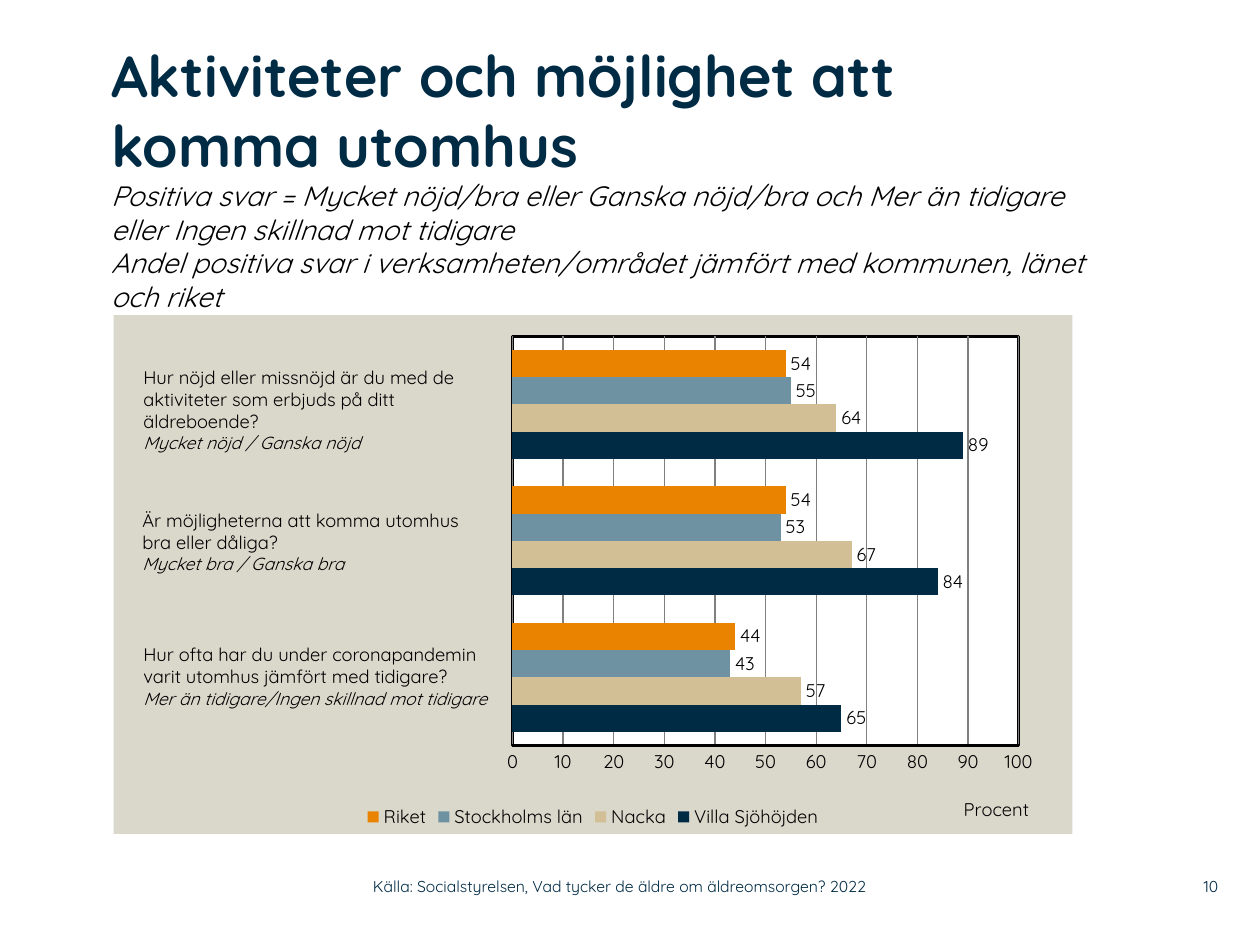
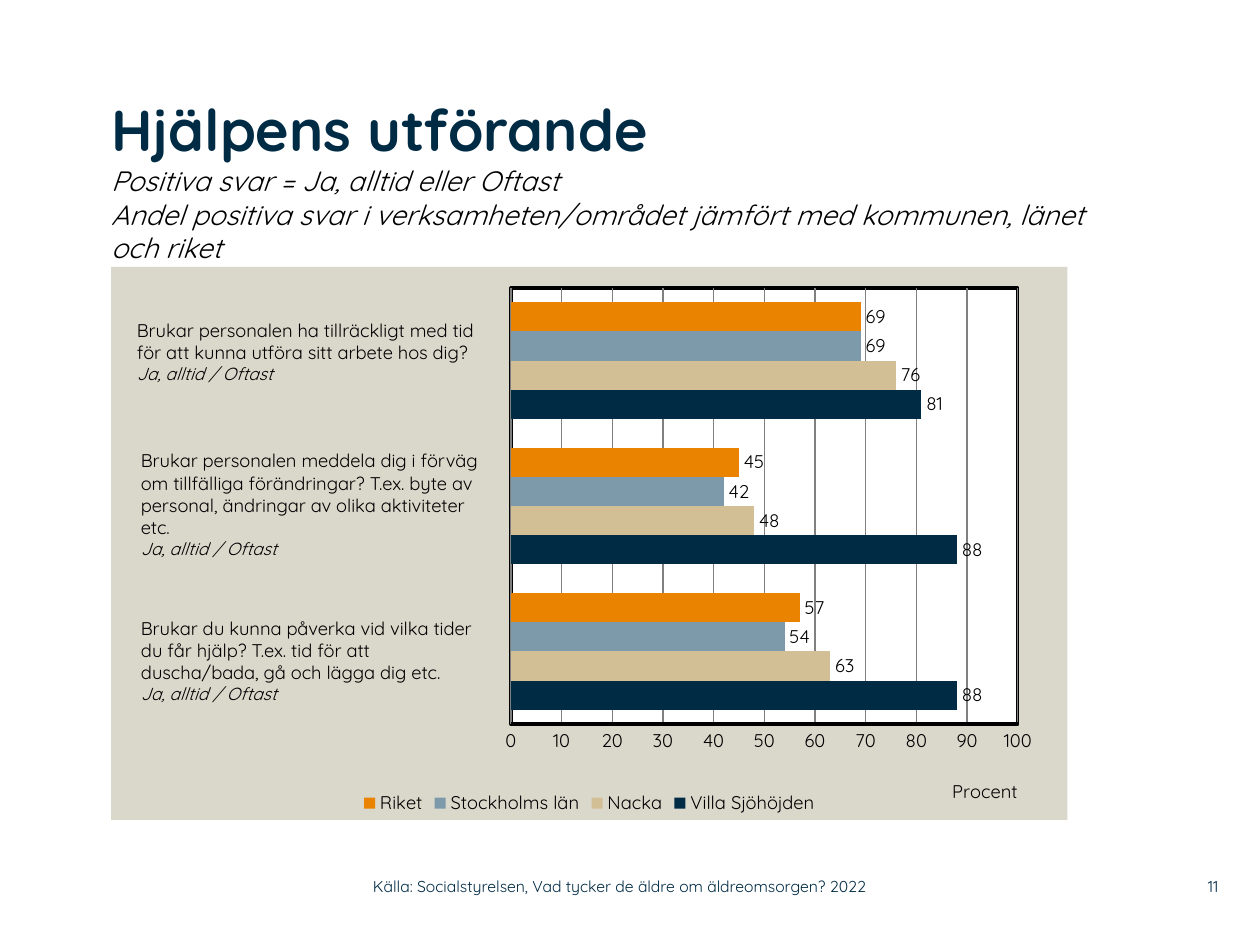
from lxml.etree import SubElement
from pptx import Presentation
from pptx.chart.data import CategoryChartData
from pptx.dml.color import RGBColor
from pptx.enum.chart import XL_CHART_TYPE, XL_LABEL_POSITION, XL_LEGEND_POSITION, XL_TICK_MARK
from pptx.enum.text import MSO_ANCHOR, PP_ALIGN
from pptx.oxml import parse_xml
from pptx.oxml.ns import nsdecls, qn
from pptx.util import Cm, Pt

FONT = "Quicksand"
NAVY, BLACK, WHITE, SAND, GRID = "002B45", "000000", "FFFFFF", "DAD7CB", "808080"
TITLE = {"size": Pt(33), "bold": True, "color": NAVY}
SUBTITLE = {"size": Pt(16), "italic": True, "color": BLACK}
QUESTION = {"size": Pt(10.5), "color": BLACK}
ANSWER = {"size": Pt(10), "italic": True, "color": BLACK}
FOOTER = {"size": Pt(9), "color": NAVY}
CHART_TEXT = {"size": Pt(10.5), "bold": False, "color": BLACK}

COMPARISON = "Andel positiva svar i verksamheten/området jämfört med kommunen, länet och riket"
SOURCE = "Källa: Socialstyrelsen, Vad tycker de äldre om äldreomsorgen? 2022"
SERIES = ["Villa Sjöhöjden", "Nacka", "Stockholms län", "Riket"]

SLIDES = [
    {
        "number": "10",
        "title": "Aktiviteter och möjlighet att komma utomhus",
        "title_box": (2.24, 0.81, 19.81, 4.8),
        "positive": "Positiva svar = Mycket nöjd/bra eller Ganska nöjd/bra och "
                    "Mer än tidigare eller Ingen skillnad mot tidigare",
        "chart_box": (2.29, 6.35, 19.33, 10.46),
        "plot": (0.416, 0.041, 0.528, 0.789),
        "axis_title": (0.883, 0.92),
        "values": [(65, 84, 89), (57, 67, 64), (43, 53, 55), (44, 54, 54)],
        "colors": [NAVY, "D3BF96", "6F92A2", "E98300"],
        "questions": [
            ((2.64, 7.26, 7.62, 2.49),
             ["Hur nöjd eller missnöjd är du med de aktiviteter som erbjuds på ditt äldreboende?"],
             "Mycket nöjd / Ganska nöjd"),
            ((2.62, 10.13, 7.65, 2.06),
             ["Är möjligheterna att komma utomhus", "bra eller dåliga?"],
             "Mycket bra / Ganska bra"),
            ((2.64, 12.85, 7.65, 2.01),
             ["Hur ofta har du under coronapandemin varit utomhus jämfört med tidigare?"],
             "Mer än tidigare/Ingen skillnad mot tidigare"),
        ],
    },
    {
        "number": "11",
        "title": "Hjälpens utförande",
        "title_box": (2.24, 1.9, 19.79, 3.07),
        "positive": "Positiva svar = Ja, alltid eller Oftast",
        "chart_box": (2.24, 5.38, 19.28, 11.15),
        "plot": (0.418, 0.038, 0.53, 0.789),
        "axis_title": (0.876, 0.918),
        "values": [(88, 88, 81), (63, 48, 76), (54, 42, 69), (57, 45, 69)],
        "colors": [NAVY, "D3BF96", "7D9AAA", "E98300"],
        "questions": [
            ((2.51, 6.3, 7.54, 2.06),
             ["Brukar personalen ha tillräckligt med tid",
              "för att kunna utföra sitt arbete hos dig?"],
             "Ja, alltid / Oftast"),
            ((2.59, 8.94, 7.59, 2.49),
             ["Brukar personalen meddela dig i förväg om tillfälliga förändringar? "
              "T.ex. byte av personal, ändringar av olika aktiviteter etc."],
             "Ja, alltid / Oftast"),
            ((2.59, 12.32, 7.54, 2.06),
             ["Brukar du kunna påverka vid vilka tider", "du får hjälp? T.ex. tid för att",
              "duscha/bada, gå och lägga dig etc."],
             "Ja, alltid / Oftast"),
        ],
    },
]


def style(font, fmt):
    font.name = FONT
    for key, value in fmt.items():
        if key == "color":
            font.color.rgb = RGBColor.from_string(value)
        else:
            setattr(font, key, value)


def add_text(s, box, lines, frame={}, align=PP_ALIGN.LEFT):
    tf = s.shapes.add_textbox(*map(Cm, box)).text_frame
    for key, value in {"word_wrap": True, **frame}.items():
        setattr(tf, key, value)
    for i, (text, fmt) in enumerate(lines):
        p = tf.add_paragraph() if i else tf.paragraphs[0]
        p.alignment = align
        r = p.add_run()
        r.text = text
        style(r.font, fmt)


prs = Presentation()
prs.slide_width, prs.slide_height = Cm(25.4), Cm(19.05)
flush = dict.fromkeys(["margin_left", "margin_top", "margin_right", "margin_bottom"], 0)
footer_frame = {**flush, "vertical_anchor": MSO_ANCHOR.MIDDLE}

for d in SLIDES:
    s = prs.slides.add_slide(prs.slide_layouts[6])
    add_text(s, d["title_box"],
             [(d["title"], TITLE), (d["positive"], SUBTITLE), (COMPARISON, SUBTITLE)], flush)

    data = CategoryChartData()
    data.categories = ["1", "2", "3"]
    for name, values in zip(SERIES, d["values"]):
        data.add_series(name, values)
    chart = s.shapes.add_chart(
        XL_CHART_TYPE.BAR_CLUSTERED, *map(Cm, d["chart_box"]), data).chart
    style(chart.font, CHART_TEXT)
    chart.has_title = False
    chart.has_legend = True
    chart.legend.position = XL_LEGEND_POSITION.BOTTOM
    chart.legend.include_in_layout = False
    style(chart.legend.font, CHART_TEXT)

    plot = chart.plots[0]
    for key, value in {"gap_width": 100, "overlap": 0, "vary_by_categories": False,
                       "has_data_labels": True}.items():
        setattr(plot, key, value)
    plot.data_labels.show_value = True
    plot.data_labels.position = XL_LABEL_POSITION.OUTSIDE_END
    style(plot.data_labels.font, CHART_TEXT)
    for series, color in zip(plot.series, d["colors"]):
        series.format.fill.solid()
        series.format.fill.fore_color.rgb = RGBColor.from_string(color)

    chart.category_axis.visible = False
    axis = chart.value_axis
    for key, value in {"minimum_scale": 0, "maximum_scale": 100, "major_unit": 10,
                       "has_major_gridlines": True, "major_tick_mark": XL_TICK_MARK.NONE,
                       "minor_tick_mark": XL_TICK_MARK.NONE}.items():
        setattr(axis, key, value)
    style(axis.tick_labels.font, CHART_TEXT)
    for line, color, width in [(axis.format.line, BLACK, 2),
                               (axis.major_gridlines.format.line, GRID, 0.75)]:
        line.color.rgb = RGBColor.from_string(color)
        line.width = Pt(width)
    axis.axis_title.text_frame.text = "Procent"
    style(axis.axis_title.text_frame.paragraphs[0].runs[0].font, CHART_TEXT)

    space = chart._chartSpace
    area = space.find(".//" + qn("c:plotArea"))
    for parent, target, place in [(area, "inner", d["plot"]),
                                  (axis.axis_title._element, None, d["axis_title"])]:
        layout = parent.find(qn("c:layout"))
        if layout is None:
            layout = parse_xml(f"<c:layout {nsdecls('c')}/>")
            parent.insert(0, layout)
        manual = SubElement(layout, qn("c:manualLayout"))
        settings = [("layoutTarget", target)] if target else []
        settings += [("xMode", "edge"), ("yMode", "edge"), *zip("xywh", place)]
        for tag, value in settings:
            SubElement(manual, qn("c:" + tag)).set("val", str(value))

    for parent, color, outline in [
            (area, WHITE, f'<a:ln w="{Pt(2)}"><a:solidFill><a:srgbClr val="{BLACK}"/></a:solidFill></a:ln>'),
            (space, SAND, "<a:ln><a:noFill/></a:ln>")]:
        sp_pr = parse_xml(f'<c:spPr {nsdecls("c", "a")}><a:solidFill><a:srgbClr val="{color}"/>'
                          f"</a:solidFill>{outline}</c:spPr>")
        if parent is area:
            area.append(sp_pr)
        else:
            space.find(qn("c:chart")).addnext(sp_pr)

    for box, question, answer in d["questions"]:
        add_text(s, box, [(text, QUESTION) for text in question] + [(answer, ANSWER)])

    add_text(s, (7.52, 17.5, 11.25, 0.74), [(SOURCE, FOOTER)], footer_frame)
    add_text(s, (23.37, 17.5, 1.19, 0.74), [(d["number"], FOOTER)], footer_frame, PP_ALIGN.RIGHT)

prs.save("out.pptx")
